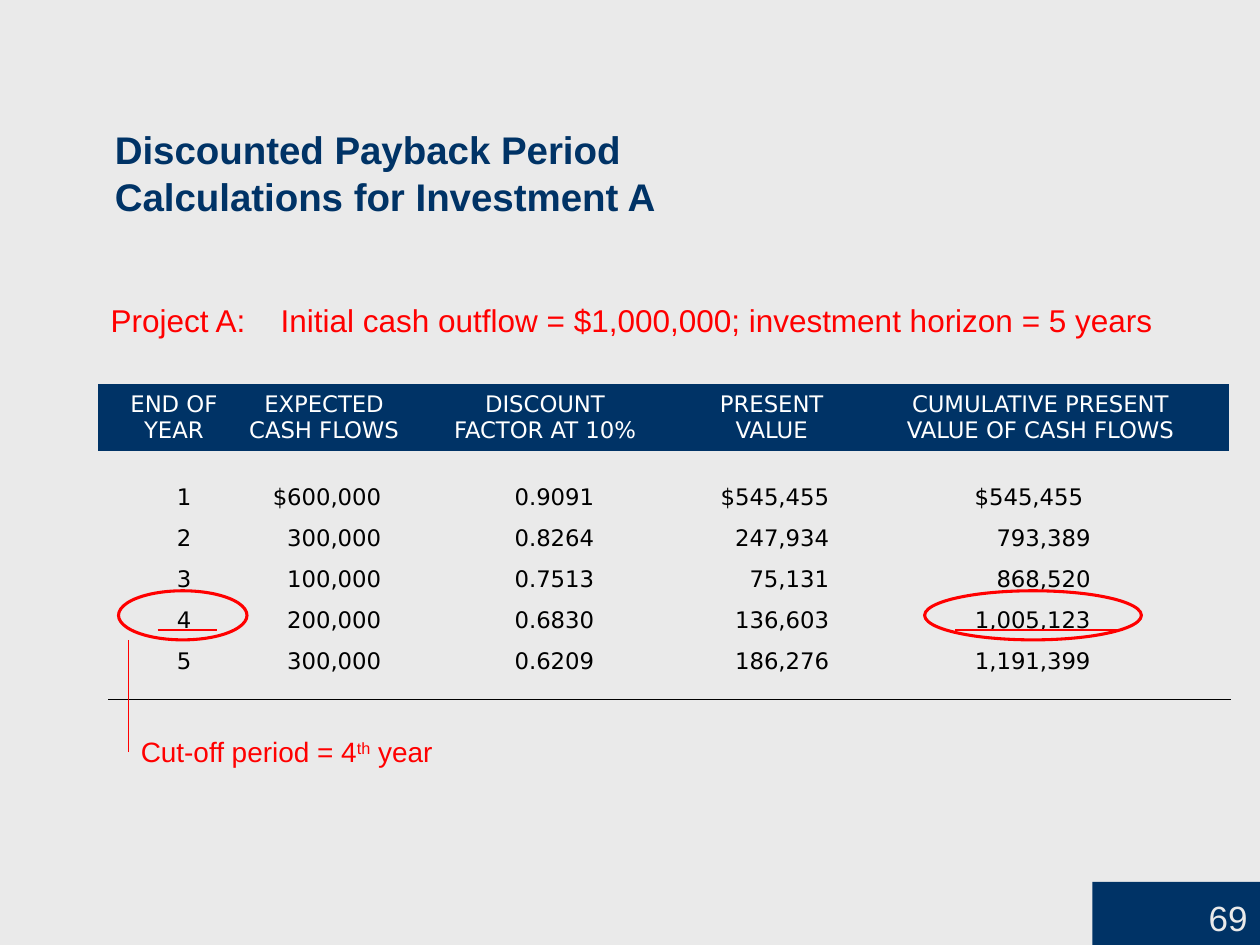
from lxml.etree import SubElement
from pptx import Presentation
from pptx.dml.color import RGBColor
from pptx.enum.shapes import MSO_CONNECTOR, MSO_SHAPE
from pptx.enum.text import MSO_ANCHOR, MSO_AUTO_SIZE, PP_ALIGN
from pptx.oxml.ns import qn
from pptx.util import Cm, Pt

NAVY, RED, BLACK, WHITE, PALE = "003366", "FF0000", "000000", "FFFFFF", "EAEAEA"
LEFT, CENTER, RIGHT = PP_ALIGN.LEFT, PP_ALIGN.CENTER, PP_ALIGN.RIGHT

HEADINGS = [
    "END OF\nYEAR",
    "EXPECTED\nCASH FLOWS",
    "DISCOUNT\nFACTOR AT 10%",
    "PRESENT\nVALUE",
    "CUMULATIVE PRESENT\nVALUE OF CASH FLOWS",
]
CASH_FLOWS = [
    ["1", "$600,000", "0.9091", "$545,455", "$545,455"],
    ["2", "300,000", "0.8264", "247,934", "793,389"],
    ["3", "100,000", "0.7513", "75,131", "868,520"],
    ["4", "200,000", "0.6830", "136,603", "1,005,123"],
    ["5", "300,000", "0.6209", "186,276", "1,191,399"],
]
COLUMN_WIDTHS = [2.85, 3.4, 5.51, 3.63, 7.4]
ROW_HEIGHTS = [1.35, 1.34, 0.83, 0.83, 0.83, 0.83]
HEADING_INSETS = [(0.2, 0), (0, 0), (0, 0), (0, 0), (0, 0.2)]
FIGURE_INSETS = [(0.61, 0), (0, 0.55), (0.38, 0), (0, 0.66), (0, 2.79)]
FIGURE_ALIGNMENTS = [CENTER, RIGHT, CENTER, RIGHT, RIGHT]
NO_GRID_STYLE = "{2D5ABB26-0587-4C30-8999-92F81FD0307C}"


def color(hex_value):
    """Turn a hex string into a colour."""
    return RGBColor.from_string(hex_value)


def apply(target, values):
    """Set every attribute named in a dict of format values."""
    for name, value in values.items():
        setattr(target, name, value)


class SlideBuilder:
    """Hold the style and the slide, and add each kind of element."""

    def __init__(self, slide):
        """Take the slide and paint its background."""
        self.slide = slide
        slide.background.fill.solid()
        slide.background.fill.fore_color.rgb = color(PALE)

    def style_text(self, frame, hue, size, align=LEFT, font="Arial", bold=False):
        """Format all the text of a frame."""
        for paragraph in frame.paragraphs:
            paragraph.alignment = align
            for run in paragraph.runs:
                apply(run.font, {"name": font, "size": Pt(size), "bold": bold})
                run.font.color.rgb = color(hue)

    def title(self, text, left, top, width, height):
        """Fill and place the title placeholder."""
        heading = self.slide.shapes.title
        apply(heading, {"left": Cm(left), "top": Cm(top), "width": Cm(width), "height": Cm(height)})
        apply(heading.text_frame, {"text": text, "word_wrap": True, "auto_size": MSO_AUTO_SIZE.NONE,
                                   "vertical_anchor": MSO_ANCHOR.BOTTOM})
        self.style_text(heading.text_frame, NAVY, 22, bold=True)

    def text(self, parts, left, top, width, height, size, tab=None):
        """Add red text made of (words, baseline) parts."""
        frame = self.slide.shapes.add_textbox(Cm(left), Cm(top), Cm(width), Cm(height)).text_frame
        apply(frame, {"word_wrap": True, "vertical_anchor": MSO_ANCHOR.BOTTOM})
        paragraph = frame.paragraphs[0]
        for words, baseline in parts:
            run = paragraph.add_run()
            run.text = words
            if baseline:
                run.font._element.set("baseline", str(baseline * 1000))
        self.style_text(frame, RED, size)
        if tab:
            stops = SubElement(paragraph._p.get_or_add_pPr(), qn("a:tabLst"))
            SubElement(stops, qn("a:tab"), pos=str(Cm(tab)), algn="l")

    def page_number(self, number, left, top, width, height):
        """Add the filled corner block with the page number."""
        block = self.slide.shapes.add_shape(MSO_SHAPE.RECTANGLE, Cm(left), Cm(top), Cm(width), Cm(height))
        block.shadow.inherit = False
        block.fill.solid()
        block.fill.fore_color.rgb = color(NAVY)
        block.line.fill.background()
        apply(block.text_frame, {"text": number, "vertical_anchor": MSO_ANCHOR.BOTTOM})
        self.style_text(block.text_frame, PALE, 20, RIGHT)

    def ring(self, left, top, width, height):
        """Add a red outline around a value."""
        oval = self.slide.shapes.add_shape(MSO_SHAPE.OVAL, Cm(left), Cm(top), Cm(width), Cm(height))
        oval.shadow.inherit = False
        oval.fill.background()
        oval.line.color.rgb = color(RED)
        oval.line.width = Pt(1.75)

    def line(self, x1, y1, x2, y2, hue=RED):
        """Add a thin straight line."""
        rule = self.slide.shapes.add_connector(MSO_CONNECTOR.STRAIGHT, Cm(x1), Cm(y1), Cm(x2), Cm(y2))
        rule.line.color.rgb = color(hue)
        rule.line.width = Pt(0.75)
        SubElement(rule._element.spPr, qn("a:effectLst"))

    def cell(self, cell, text, insets, heading, align):
        """Fill and format one table cell."""
        before, after = insets
        apply(cell, {
            "text": text,
            "margin_left": Cm(before),
            "margin_right": Cm(after),
            "margin_top": 0,
            "margin_bottom": Cm(0 if heading else 0.15),
            "vertical_anchor": MSO_ANCHOR.MIDDLE if heading else MSO_ANCHOR.BOTTOM,
        })
        if heading:
            cell.fill.solid()
            cell.fill.fore_color.rgb = color(NAVY)
        else:
            cell.fill.background()
        self.style_text(cell.text_frame, WHITE if heading else BLACK, 13, align, "DejaVu Sans")

    def table(self, left, top):
        """Add the cash flow table and return it."""
        holder = self.slide.shapes.add_table(len(ROW_HEIGHTS), len(COLUMN_WIDTHS), Cm(left), Cm(top),
                                             Cm(sum(COLUMN_WIDTHS)), Cm(sum(ROW_HEIGHTS)))
        for style in holder._element.iter(qn("a:tableStyleId")):
            style.text = NO_GRID_STYLE
        table = holder.table
        table.horz_banding = False
        for column, width in zip(table.columns, COLUMN_WIDTHS):
            column.width = Cm(width)
        for index, (row, height, texts) in enumerate(zip(table.rows, ROW_HEIGHTS, [HEADINGS] + CASH_FLOWS)):
            row.height = Cm(height)
            heading = index == 0
            insets = HEADING_INSETS if heading else FIGURE_INSETS
            alignments = [CENTER] * len(texts) if heading else FIGURE_ALIGNMENTS
            for cell, text, inset, align in zip(row.cells, texts, insets, alignments):
                self.cell(cell, text, inset, heading, align)
        return table


def main():
    """Build the slide and save it."""
    deck = Presentation()
    apply(deck, {"slide_width": Cm(25.4), "slide_height": Cm(19.05)})
    page = SlideBuilder(deck.slides.add_slide(deck.slide_layouts[5]))
    page.page_number("69", 22.02, 17.78, 3.38, 1.27)
    cash_table = page.table(1.98, 7.75)
    cash_table.cell(1, 4).margin_right = Cm(2.94)
    page.title("Discounted Payback Period\vCalculations for Investment A", 2.06, 1.42, 22.68, 3.12)
    page.line(2.18, 14.1, 24.82, 14.1, BLACK)
    page.text([("Project A:\tInitial cash outflow = $1,000,000; investment horizon = 5 years", 0)],
              1.98, 5.94, 22.68, 1.02, 18, tab=3.43)
    for start, end in [(3.18, 4.37), (19.25, 22.63)]:
        page.line(start, 12.7, end, 12.7)
    for left, width in [(18.64, 4.37), (2.39, 2.59)]:
        page.ring(left, 11.91, width, 0.99)
    page.text([("Cut-off period = 4", 0), ("th", 30), (" year", 0)], 2.59, 14.68, 6.55, 0.94, 16)
    page.line(2.59, 15.16, 2.59, 12.9)
    deck.save("out.pptx")


if __name__ == "__main__":
    main()
